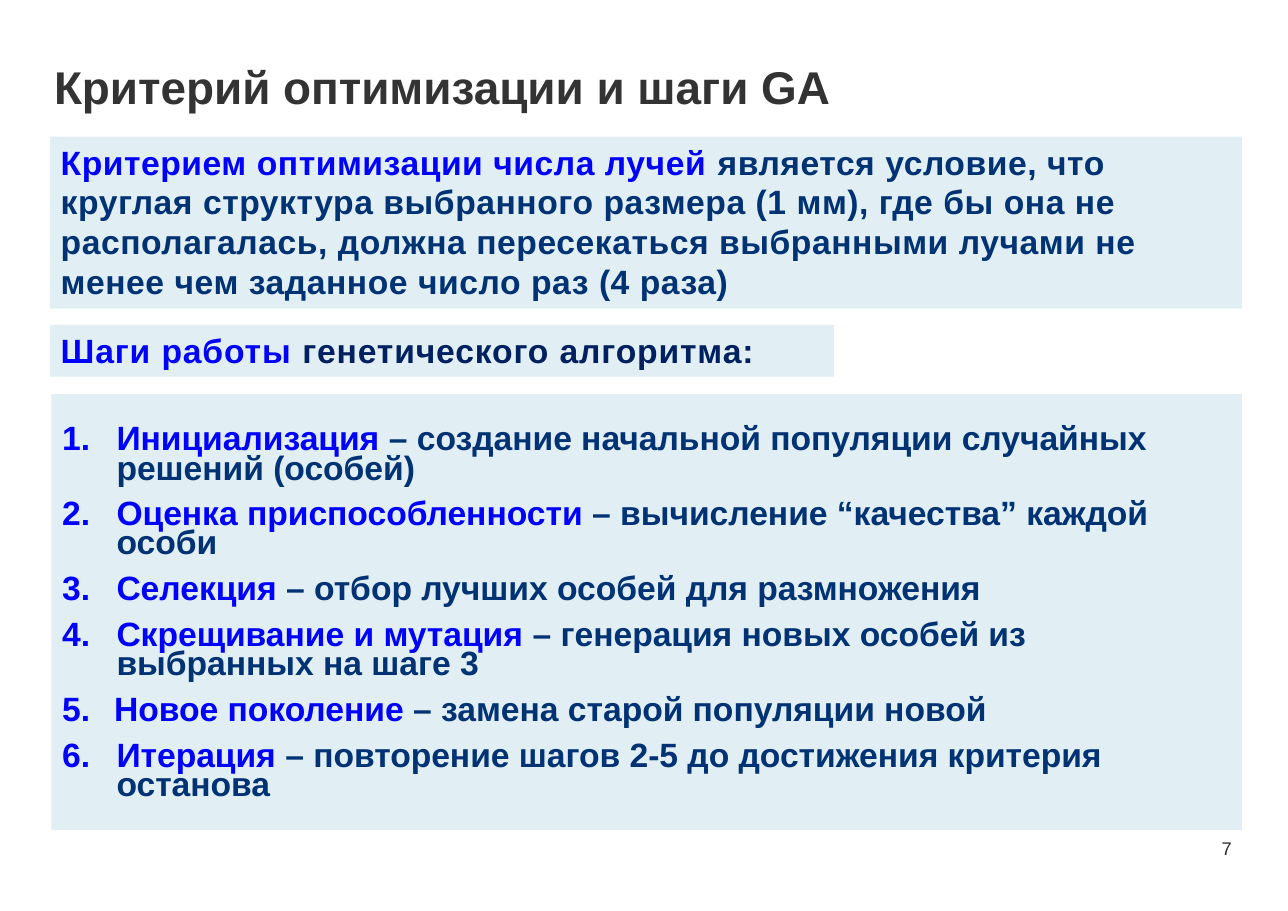
from lxml.etree import SubElement
from pptx import Presentation
from pptx.dml.color import RGBColor
from pptx.enum.shapes import MSO_SHAPE as Shape
from pptx.enum.text import MSO_ANCHOR as Anchor, PP_ALIGN as Align
from pptx.oxml.ns import qn
from pptx.util import Pt

color = RGBColor.from_string
GRAY, BLUE, NAVY, DARK, PALE = "333333", "0000FF", "003274", "002060", "E1EFF4"


def write(para, text, size=22, fill=NAVY, bold=True, tracking=0):
    span = para.add_run()
    span.text = text
    span.font.name = "Arial"
    span.font.size = Pt(size)
    span.font.bold = bold
    span.font.color.rgb = color(fill)
    if tracking:
        span.font._element.set("spc", str(round(tracking * 100)))


def add_panel(left, top, width, height):
    panel = page.shapes.add_shape(Shape.RECTANGLE, Pt(left), Pt(top), Pt(width), Pt(height))
    panel.shadow.inherit = False
    panel.fill.solid()
    panel.fill.fore_color.rgb = color(PALE)
    panel.line.fill.background()
    frame = panel.text_frame
    frame.word_wrap = True
    frame.vertical_anchor = Anchor.TOP
    frame.paragraphs[0].alignment = Align.LEFT
    return frame


deck = Presentation()
deck.slide_width, deck.slide_height = Pt(841.68), Pt(595.44)
page = deck.slides.add_slide(deck.slide_layouts[6])

labels = [
    ("Критерий оптимизации и шаги GA", (35.3, 36.7, 646.6, 39.6), 5.76,
     Anchor.MIDDLE, Align.LEFT, 0.8, 30, True),
    ("7", (769, 544.3, 36, 17.3), 0, Anchor.BOTTOM, Align.RIGHT, 0.9, 12, False),
]
for text, place, inset, anchor, align, spacing, size, bold in labels:
    frame = page.shapes.add_textbox(*map(Pt, place)).text_frame
    frame.word_wrap = True
    frame.vertical_anchor = anchor
    frame.margin_left = frame.margin_right = frame.margin_bottom = 0
    frame.margin_top = Pt(inset)
    para = frame.paragraphs[0]
    para.alignment = align
    para.line_spacing = spacing
    write(para, text, size=size, fill=GRAY, bold=bold)

para = add_panel(32.6, 89.4, 779, 112.3).paragraphs[0]
para.line_spacing = Pt(26)
write(para, "Критерием оптимизации числа лучей ", fill=BLUE, tracking=0.4)
write(para, "является условие, что круглая структура выбранного размера (1 мм), "
      "где бы она не располагалась, должна пересекаться выбранными лучами "
      "не менее чем заданное число раз (4 раза)", tracking=0.4)

para = add_panel(32.6, 212.3, 512.6, 34).paragraphs[0]
write(para, "Шаги работы ", fill=BLUE, tracking=0.6)
write(para, "генетического алгоритма:", fill=DARK, tracking=0.6)

steps = [
    ("Инициализация", "создание начальной популяции случайных решений (особей)", 35.5),
    ("Оценка приспособленности", "вычисление “качества” каждой особи", 35.5),
    ("Селекция", "отбор лучших особей для размножения", 35.5),
    ("Скрещивание и мутация", "генерация новых особей из выбранных на шаге 3", 35.5),
    ("Новое поколение", "замена старой популяции новой", 34),
    ("Итерация", "повторение шагов 2-5 до достижения критерия останова", 35.5),
]
frame = add_panel(33.6, 257.6, 778, 285)
frame.margin_top = Pt(22.6)
for index, (name, meaning, indent) in enumerate(steps):
    para = frame.add_paragraph() if index else frame.paragraphs[0]
    para.alignment = Align.LEFT
    para.line_spacing = Pt(19)
    if index:
        para.space_before = Pt(11)
    properties = para._p.get_or_add_pPr()
    properties.set("marL", str(Pt(indent)))
    properties.set("indent", str(-Pt(indent)))
    SubElement(properties, qn("a:buFont"), typeface="Arial")
    SubElement(properties, qn("a:buAutoNum"), type="arabicPeriod")
    write(para, name, fill=BLUE)
    write(para, f" – {meaning}")

deck.save("out.pptx")
